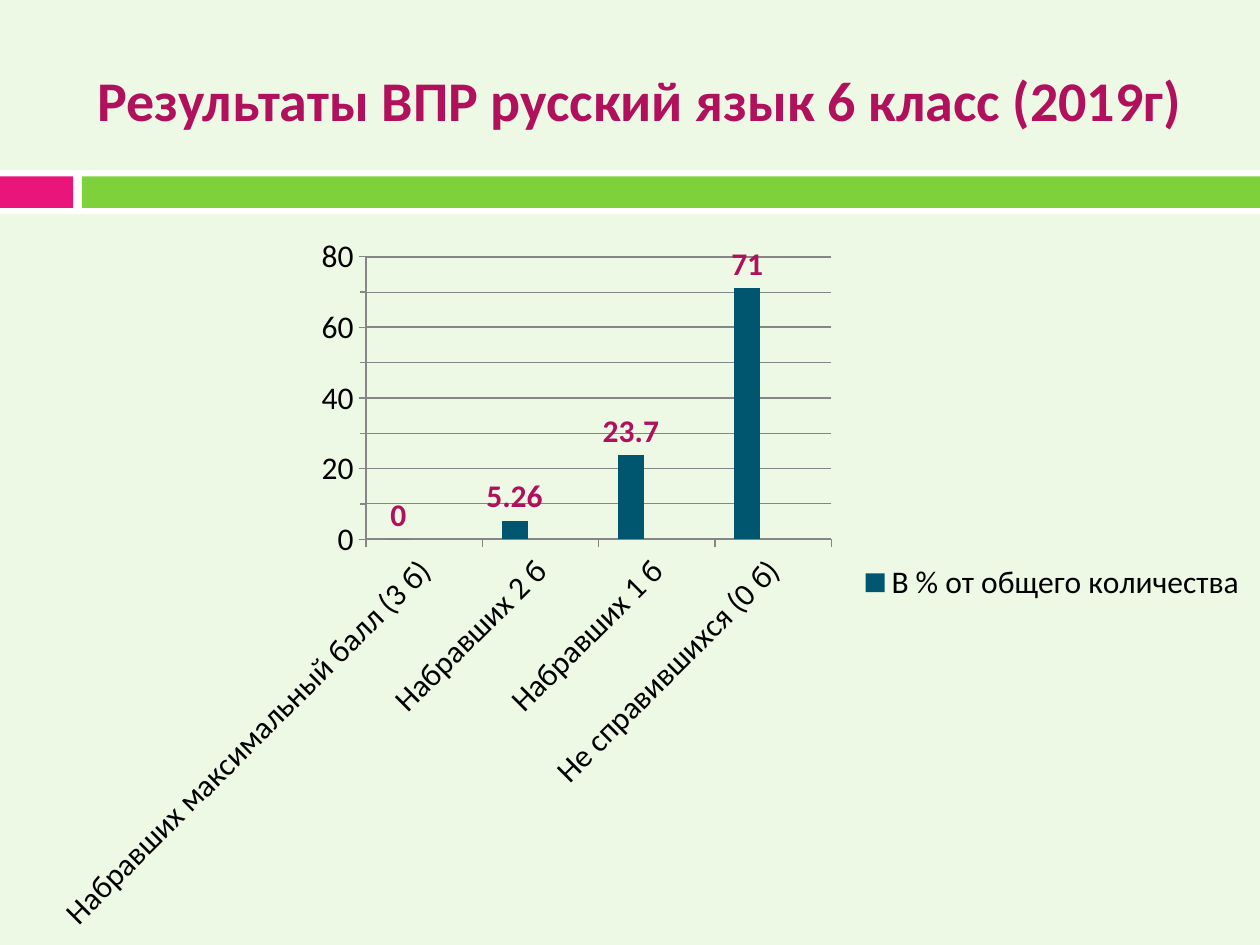
from copy import deepcopy
from dataclasses import dataclass

from lxml import etree
from pptx import Presentation
from pptx.chart.data import CategoryChartData
from pptx.dml.color import RGBColor
from pptx.enum.chart import XL_CHART_TYPE, XL_LABEL_POSITION, XL_LEGEND_POSITION, XL_TICK_MARK
from pptx.enum.shapes import MSO_SHAPE
from pptx.enum.text import MSO_ANCHOR, PP_ALIGN
from pptx.oxml import parse_xml
from pptx.oxml.ns import nsdecls, qn
from pptx.util import Inches, Pt

RECTANGLE = MSO_SHAPE.RECTANGLE
COLUMNS = XL_CHART_TYPE.COLUMN_CLUSTERED
OUTSIDE_END = XL_LABEL_POSITION.OUTSIDE_END
LEGEND_RIGHT = XL_LEGEND_POSITION.RIGHT
TICK_OUTSIDE = XL_TICK_MARK.OUTSIDE
MIDDLE = MSO_ANCHOR.MIDDLE
LEFT = PP_ALIGN.LEFT

PAGE_WIDTH = Inches(10)
PAGE_HEIGHT = Inches(7.5)


@dataclass(frozen=True)
class Theme:
    font: str = "Calibri"
    title_size: int = 32
    chart_size: int = 18
    background: str = "EEF9E5"
    white: str = "FFFFFF"
    pink: str = "EA157A"
    green: str = "7FD13B"
    amber: str = "FEB80A"
    teal: str = "00566E"
    berry: str = "B0105C"
    text: str = "000000"
    grid: str = "868686"


@dataclass(frozen=True)
class Area:
    left: float
    top: float
    width: float
    height: float

    def lengths(self) -> tuple:
        return tuple(Inches(value) for value in (self.left, self.top, self.width, self.height))


@dataclass(frozen=True)
class Band:
    area: Area
    color: str


@dataclass(frozen=True)
class Series:
    name: str
    values: tuple
    color: str


THEME = Theme()
BANDS = (
    Band(Area(0, 1.35, 10, 0.35), THEME.white),
    Band(Area(0, 1.4, 0.58, 0.25), THEME.pink),
    Band(Area(0.65, 1.4, 9.35, 0.25), THEME.green),
)
TITLE_AREA = Area(0.67, 0.25, 8.92, 1.08)
CHART_AREA = Area(0.28, 1.75, 9.72, 5.75)
PLOT_SHARE = {"x": 0.27, "y": 0.05, "w": 0.38, "h": 0.39}
CATEGORIES = (
    "Набравших максимальный балл (3 б)",
    "Набравших 2 б",
    "Набравших 1 б",
    "Не справившихся (0 б)",
)
EMPTY = (None,) * len(CATEGORIES)
SERIES = (
    Series("В % от общего количества", (0, 5.26, 23.7, 71), THEME.teal),
    Series("Series 2", EMPTY, THEME.pink),
    Series("Series 3", EMPTY, THEME.amber),
)


def style_font(font, size: int, color: str, bold: bool = False) -> None:
    font.name = THEME.font
    font.size = Pt(size)
    font.bold = bold
    font.color.rgb = RGBColor.from_string(color)


def style_line(line, width: float) -> None:
    line.color.rgb = RGBColor.from_string(THEME.grid)
    line.width = Pt(width)


def draw_band(page, band: Band) -> None:
    box = page.shapes.add_shape(RECTANGLE, *band.area.lengths())
    box.shadow.inherit = False
    box.fill.solid()
    box.fill.fore_color.rgb = RGBColor.from_string(band.color)
    box.line.fill.background()


def write_title(page, text: str) -> None:
    title = page.shapes.title
    title.left, title.top, title.width, title.height = TITLE_AREA.lengths()
    title.text_frame.text = text
    title.text_frame.vertical_anchor = MIDDLE
    para = title.text_frame.paragraphs[0]
    para.alignment = LEFT
    style_font(para.font, THEME.title_size, THEME.berry, bold=True)


def place_plot(chart) -> None:
    plot_area = chart.plots[0]._element.getparent()
    for old_layout in plot_area.findall(qn("c:layout")):
        plot_area.remove(old_layout)
    values = "".join(f'<c:{side} val="{share}"/>' for side, share in PLOT_SHARE.items())
    plot_area.insert(0, parse_xml(
        f'<c:layout {nsdecls("c")}><c:manualLayout><c:layoutTarget val="inner"/>'
        f'<c:xMode val="edge"/><c:yMode val="edge"/>{values}</c:manualLayout></c:layout>'
    ))


def style_gridlines(axis) -> None:
    axis.has_major_gridlines = axis.has_minor_gridlines = True
    style_line(axis.major_gridlines.format.line, 1)
    major = axis._element.find(qn("c:majorGridlines"))
    minor = axis._element.find(qn("c:minorGridlines"))
    minor.append(deepcopy(major.find(qn("c:spPr"))))
    minor.find(f".//{qn('a:ln')}").set("w", str(Pt(0.5)))


def style_axes(chart) -> None:
    for axis in (chart.category_axis, chart.value_axis):
        axis.major_tick_mark = TICK_OUTSIDE
        style_line(axis.format.line, 0.75)
        style_font(axis.tick_labels.font, THEME.chart_size, THEME.text)
    body = chart.category_axis._element.find(qn("c:txPr")).find(qn("a:bodyPr"))
    body.set("rot", "-2700000")
    body.set("vert", "horz")
    scale = chart.value_axis
    scale.minimum_scale, scale.maximum_scale = 0, 80
    scale.major_unit, scale.minor_unit = 20, 10
    scale.minor_tick_mark = TICK_OUTSIDE
    style_gridlines(scale)


def style_legend(chart) -> None:
    chart.has_legend = True
    legend = chart.legend
    legend.position = LEGEND_RIGHT
    legend.include_in_layout = False
    style_font(legend.font, THEME.chart_size, THEME.text)
    for index in range(1, len(SERIES)):
        entry = etree.Element(qn("c:legendEntry"))
        etree.SubElement(entry, qn("c:idx")).set("val", str(index))
        etree.SubElement(entry, qn("c:delete")).set("val", "1")
        legend._element.insert(index, entry)


def draw_chart(page) -> None:
    data = CategoryChartData()
    data.categories = CATEGORIES
    for series in SERIES:
        data.add_series(series.name, series.values)
    chart = page.shapes.add_chart(COLUMNS, *CHART_AREA.lengths(), data).chart
    chart.has_title = False
    style_font(chart.font, THEME.chart_size, THEME.text)
    plot = chart.plots[0]
    plot.gap_width, plot.overlap = 150, 0
    plot.vary_by_categories = False
    for drawn, series in zip(plot.series, SERIES):
        drawn.format.fill.solid()
        drawn.format.fill.fore_color.rgb = RGBColor.from_string(series.color)
    labels = plot.series[0].data_labels
    labels.show_value = True
    labels.position = OUTSIDE_END
    style_font(labels.font, THEME.chart_size, THEME.berry, bold=True)
    style_axes(chart)
    style_legend(chart)
    place_plot(chart)


def main() -> None:
    deck = Presentation()
    deck.slide_width, deck.slide_height = PAGE_WIDTH, PAGE_HEIGHT
    page = deck.slides.add_slide(deck.slide_layouts[5])
    page.background.fill.solid()
    page.background.fill.fore_color.rgb = RGBColor.from_string(THEME.background)
    for band in BANDS:
        draw_band(page, band)
    write_title(page, "Результаты ВПР русский язык 6 класс (2019г)")
    draw_chart(page)
    deck.save("out.pptx")


if __name__ == "__main__":
    main()
